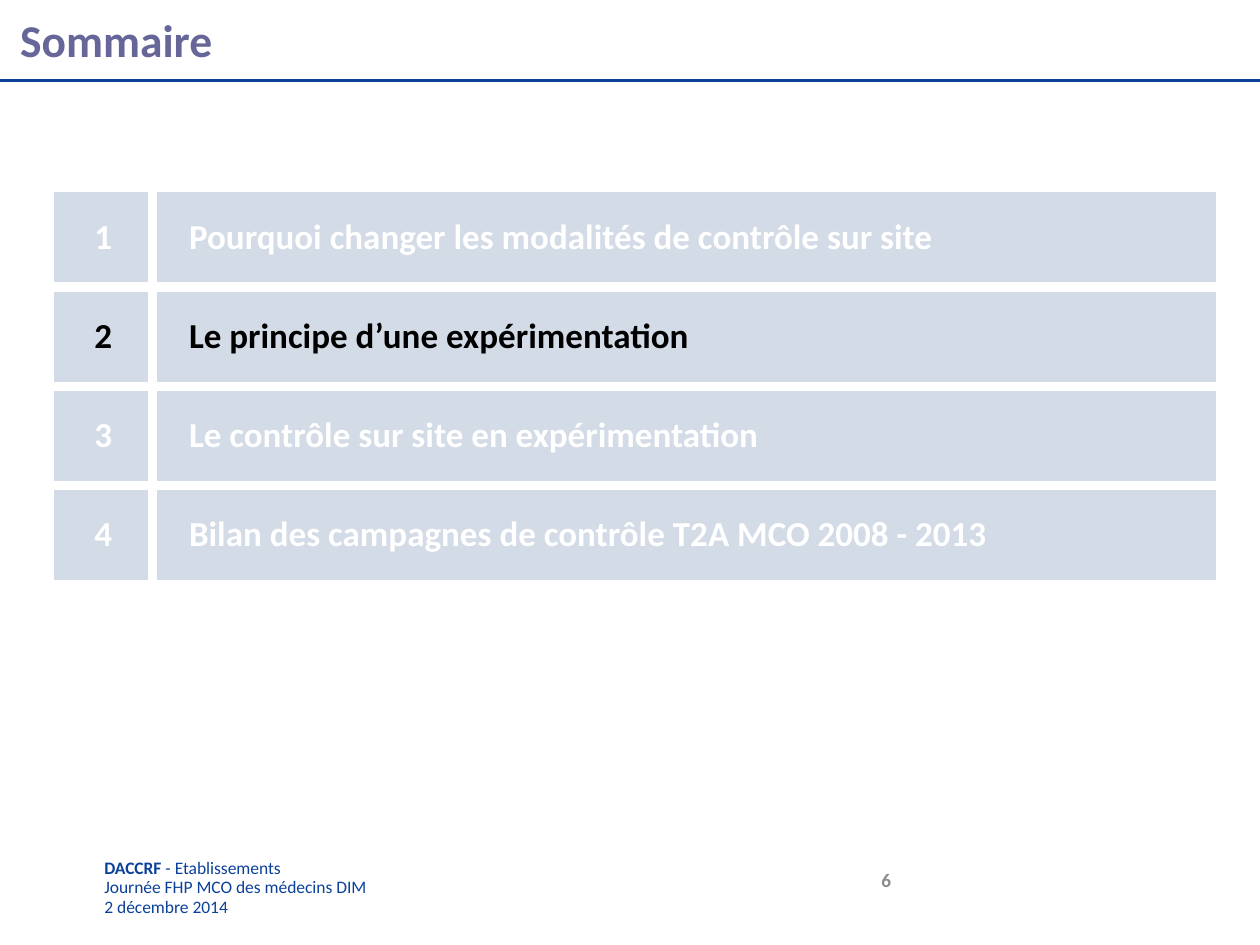
from dataclasses import dataclass

from lxml.etree import SubElement
from pptx import Presentation
from pptx.dml.color import RGBColor
from pptx.enum.text import MSO_ANCHOR, PP_ALIGN
from pptx.oxml.ns import qn
from pptx.util import Inches, Pt


@dataclass(frozen=True)
class Theme:
    font: str = "Calibri"
    blue: str = "0C419A"
    purple: str = "666699"
    gray: str = "8C8C8C"
    band: str = "A9B9CF"
    white: str = "FFFFFF"
    black: str = "000000"
    title_size: int = 26
    agenda_size: int = 20
    number_size: int = 11
    footer_size: int = 10


THEME = Theme()
AGENDA = [
    "Pourquoi changer les modalités de contrôle sur site",
    "Le principe d’une expérimentation",
    "Le contrôle sur site en expérimentation",
    "Bilan des campagnes de contrôle T2A MCO 2008 - 2013",
]
CURRENT = 2


def style(paragraph, size, color, bold=True):
    font = paragraph.font
    font.name, font.size, font.bold = THEME.font, Pt(size), bold
    font.color.rgb = RGBColor.from_string(color)


def add_title(slide, box, text):
    title = slide.shapes.title
    title.left, title.top, title.width, title.height = box
    frame = title.text_frame
    frame.text = text
    frame.vertical_anchor = MSO_ANCHOR.MIDDLE
    paragraph = frame.paragraphs[0]
    paragraph.alignment = PP_ALIGN.LEFT
    style(paragraph, THEME.title_size, THEME.purple)


def add_rule(slide, left, top, width):
    rule = slide.shapes.add_connector(1, left, top, left + width, top)
    rule.line.color.rgb = RGBColor.from_string(THEME.blue)
    rule.line.width = Pt(1.5)
    SubElement(rule._element.spPr, qn("a:effectLst"))


def set_borders(cell, sides):
    """Draw thick white borders on the given sides and none on the others."""
    properties = cell._tc.get_or_add_tcPr()
    for side in "LRTB":
        line = SubElement(properties, qn(f"a:ln{side}"))
        if side in sides:
            line.set("w", str(Pt(6)))
            fill = SubElement(line, qn("a:solidFill"))
            SubElement(fill, qn("a:srgbClr"), val=THEME.white)
        else:
            line.set("w", "0")
            SubElement(line, qn("a:noFill"))


def fill_cell(cell, text, sides, color):
    set_borders(cell, sides)
    cell.fill.solid()
    cell.fill.fore_color.rgb = RGBColor.from_string(THEME.band)
    band = cell._tc.tcPr.find(f"{qn('a:solidFill')}/{qn('a:srgbClr')}")
    SubElement(band, qn("a:alpha"), val="50000")
    cell.margin_left = cell.margin_right = Inches(0.1)
    cell.margin_top = cell.margin_bottom = Inches(0.1)
    cell.vertical_anchor = MSO_ANCHOR.MIDDLE
    cell.text = text
    paragraph = cell.text_frame.paragraphs[0]
    style(paragraph, THEME.agenda_size, color)
    return paragraph


def add_agenda(slide, box, items, current):
    left, top, width, height = box
    table = slide.shapes.add_table(len(items), 2, left, top, width, height).table
    table.first_row = table.horz_banding = False
    number_width = Inches(0.78)
    table.columns[0].width = number_width
    table.columns[1].width = width - number_width
    for number, item in enumerate(items, start=1):
        color = THEME.black if number == current else THEME.white
        number_cell, item_cell = table.rows[number - 1].cells
        paragraph = fill_cell(number_cell, str(number), "RTB", color)
        paragraph.alignment = PP_ALIGN.CENTER
        paragraph = fill_cell(item_cell, item, "LTB", color)
        properties = paragraph._p.get_or_add_pPr()
        properties.set("marL", str(Inches(0.19)))
        properties.set("indent", "0")


def add_footer(slide, box, lines):
    frame = slide.shapes.add_textbox(*box).text_frame
    frame.word_wrap = True
    for index, runs in enumerate(lines):
        paragraph = frame.add_paragraph() if index else frame.paragraphs[0]
        paragraph.line_spacing = 0.6
        if index:
            paragraph.space_before = Pt(4)
        style(paragraph, THEME.footer_size, THEME.blue, bold=False)
        for text, bold in runs:
            run = paragraph.add_run()
            run.text = text
            if bold:
                run.font.bold = True


def add_page_number(slide, box, number):
    frame = slide.shapes.add_textbox(*box).text_frame
    frame.word_wrap = True
    frame.vertical_anchor = MSO_ANCHOR.MIDDLE
    frame.text = str(number)
    paragraph = frame.paragraphs[0]
    paragraph.alignment = PP_ALIGN.RIGHT
    style(paragraph, THEME.number_size, THEME.gray)


def inch_box(*lengths):
    return [Inches(length) for length in lengths]


def main():
    presentation = Presentation()
    presentation.slide_width, presentation.slide_height = Inches(10), Inches(7.5)
    slide = presentation.slides.add_slide(presentation.slide_layouts[5])

    # Header
    add_rule(slide, Inches(0), Inches(0.64), presentation.slide_width)
    add_title(slide, inch_box(0.06, 0.05, 9.82, 0.52), "Sommaire")

    # Agenda with the current part highlighted
    add_agenda(slide, inch_box(0.43, 1.49, 9.22, 3.15), AGENDA, CURRENT)

    # Footer
    add_footer(slide, inch_box(0.73, 6.81, 3.5, 0.54), [
        [("DACCRF ", True), ("- Etablissements", False)],
        [("Journée FHP MCO des médecins DIM", False)],
        [("2 décembre 2014", False)],
    ])
    add_page_number(slide, inch_box(4.84, 6.78, 2.33, 0.4), 6)

    presentation.save("out.pptx")


if __name__ == "__main__":
    main()
